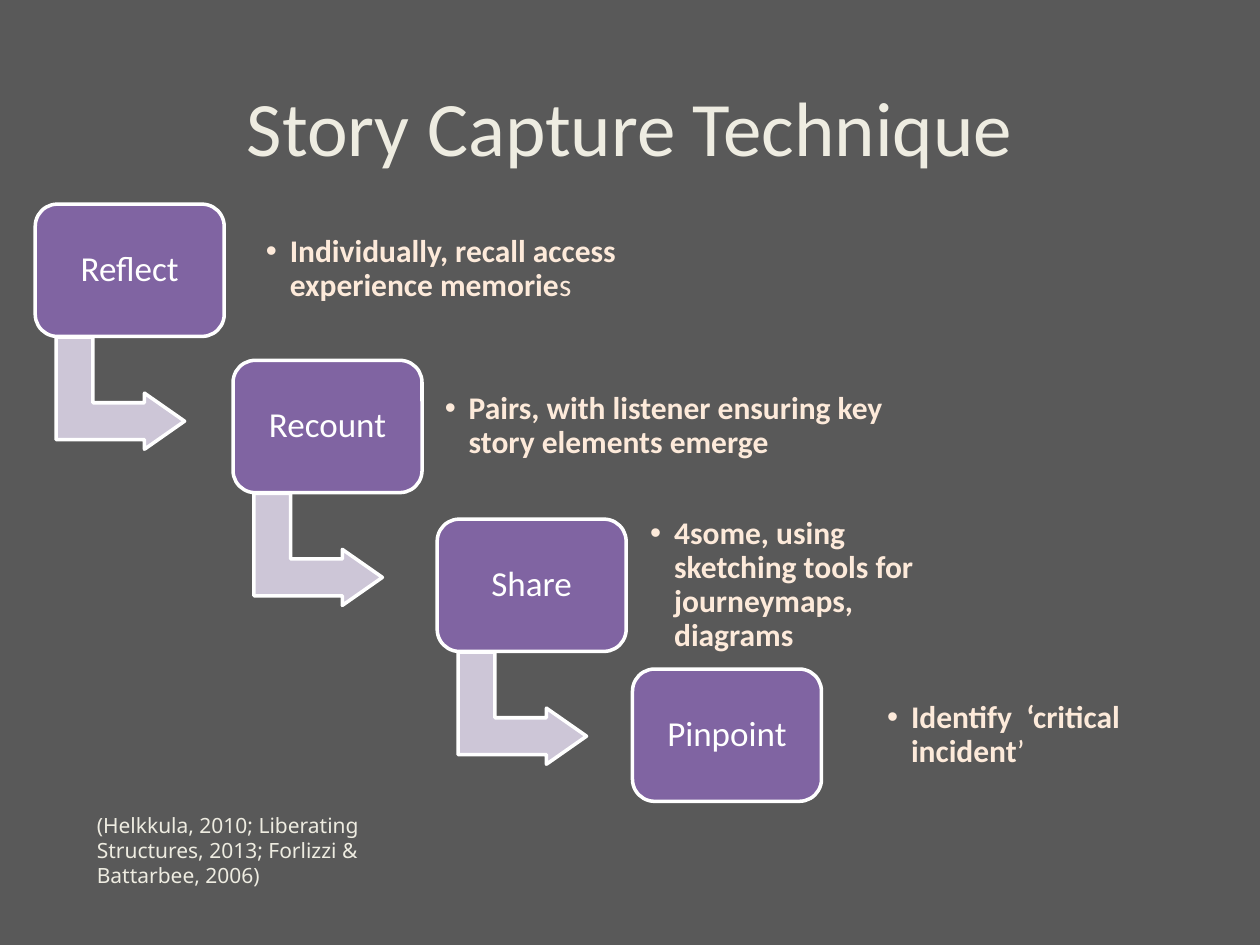
"""Build the Story Capture Technique slide: four cascading steps with their details."""
from typing import Any, NamedTuple

from lxml.etree import SubElement
from pptx import Presentation
from pptx.dml.color import RGBColor
from pptx.enum.shapes import MSO_SHAPE as Preset
from pptx.enum.text import MSO_ANCHOR as Anchor, MSO_AUTO_SIZE as AutoSize, PP_ALIGN as Align
from pptx.oxml.ns import qn
from pptx.util import Inches, Pt

BACKGROUND = RGBColor(0x59, 0x59, 0x59)
CREAM = RGBColor(0xEE, 0xEC, 0xE1)
PEACH = RGBColor(0xFD, 0xEA, 0xDA)
PURPLE = RGBColor(0x80, 0x64, 0xA2)
LILAC = RGBColor(0xCD, 0xC6, 0xD7)
WHITE = RGBColor(0xFF, 0xFF, 0xFF)

STEP_WIDTH, STEP_HEIGHT = 1.5, 1.05
ARROW_WIDTH, ARROW_HEIGHT = 0.89, 1.02
ARROW_SHIFT_X, ARROW_SHIFT_Y = 0.23, 0.99
ARROW_ADJUSTMENTS = (0.328, 0.25, 0.358)


class Box(NamedTuple):
    left: float
    top: float
    width: float
    height: float


class Step(NamedTuple):
    name: str
    left: float
    top: float
    bold_detail: str
    plain_ending: str
    detail_box: Box


STEPS = (
    Step("Reflect", 0.28, 1.62, "Individually, recall access experience memorie", "s",
         Box(2.04, 1.6, 4.06, 1.07)),
    Step("Recount", 1.85, 2.86, "Pairs, with listener ensuring key story elements emerge", "",
         Box(3.46, 2.7, 3.83, 1.37)),
    Step("Share", 3.47, 4.12, "4some, using sketching tools for journeymaps, diagrams", "",
         Box(5.09, 4.08, 2.44, 1.13)),
    Step("Pinpoint", 5.02, 5.31, "Identify  ‘critical incident", "’",
         Box(6.97, 5.41, 2.13, 0.85)),
)


def apply_format(target: Any, values: dict[str, Any]) -> None:
    for attribute, value in values.items():
        setattr(target, attribute, value)


def place(shape: Any, box: Box) -> None:
    apply_format(shape, {side: Inches(length) for side, length in box._asdict().items()})


def set_frame(shape: Any, margin: float) -> Any:
    frame = shape.text_frame
    sides = ("margin_left", "margin_top", "margin_right", "margin_bottom")
    apply_format(frame, dict.fromkeys(sides, Inches(margin)))
    apply_format(frame, {"word_wrap": True, "auto_size": AutoSize.NONE,
                         "vertical_anchor": Anchor.MIDDLE})
    return frame


def write(paragraph: Any, text: str, size: int, color: RGBColor,
          font: str = "Calibri", bold: bool = False) -> None:
    run = paragraph.add_run()
    run.text = text
    apply_format(run.font, {"name": font, "size": Pt(size), "bold": bold})
    run.font.color.rgb = color


def add_outlined(slide: Any, preset: Preset, box: Box, fill: RGBColor,
                 adjustments: tuple[float, ...]) -> Any:
    shape = slide.shapes.add_shape(preset, *map(Inches, box))
    shape.shadow.inherit = False
    shape.fill.solid()
    shape.fill.fore_color.rgb = fill
    shape.line.color.rgb = WHITE
    shape.line.width = Pt(2)
    for index, value in enumerate(adjustments):
        shape.adjustments[index] = value
    return shape


def add_arrow(slide: Any, step: Step) -> None:
    box = Box(step.left + ARROW_SHIFT_X, step.top + ARROW_SHIFT_Y, ARROW_WIDTH, ARROW_HEIGHT)
    arrow = add_outlined(slide, Preset.BENT_UP_ARROW, box, LILAC, ARROW_ADJUSTMENTS)
    arrow.rotation = 90


def add_step(slide: Any, step: Step) -> None:
    box = Box(step.left, step.top, STEP_WIDTH, STEP_HEIGHT)
    card = add_outlined(slide, Preset.ROUNDED_RECTANGLE, box, PURPLE, (0.167,))
    name = set_frame(card, 0.08).paragraphs[0]
    apply_format(name, {"alignment": Align.CENTER, "line_spacing": 0.9, "space_after": Pt(7)})
    write(name, step.name, 20, WHITE)


def fill_detail(body: Any, step: Step) -> None:
    place(body, step.detail_box)
    detail = set_frame(body, 0.07).paragraphs[0]
    apply_format(detail, {"level": 1, "alignment": Align.LEFT, "line_spacing": 0.9,
                          "space_before": Pt(0), "space_after": Pt(2.7)})
    properties = detail._p.get_or_add_pPr()
    properties.set("marL", str(Inches(0.19)))
    properties.set("indent", str(Inches(-0.19)))
    SubElement(properties, qn("a:buChar")).set("char", "•")
    write(detail, step.bold_detail, 18, PEACH, bold=True)
    if step.plain_ending:
        write(detail, step.plain_ending, 18, PEACH)


def add_citation(slide: Any) -> None:
    citation = slide.shapes.add_textbox(*map(Inches, Box(0.67, 6.4, 2.99, 0.71)))
    apply_format(citation.text_frame, {"word_wrap": True, "auto_size": AutoSize.SHAPE_TO_FIT_TEXT})
    write(citation.text_frame.paragraphs[0],
          "(Helkkula, 2010; Liberating Structures, 2013; Forlizzi & Battarbee, 2006)",
          12, CREAM, "Noto Sans")


def main() -> None:
    deck = Presentation()
    deck.slide_width, deck.slide_height = Inches(10), Inches(7.5)
    comparison = deck.slide_layouts.get_by_name("Comparison")
    slide = deck.slides.add_slide(comparison)
    slide.background.fill.solid()
    slide.background.fill.fore_color.rgb = BACKGROUND

    title = slide.shapes.title
    place(title, Box(0.5, 0.37, 9, 1.25))
    title.text_frame.vertical_anchor = Anchor.MIDDLE
    heading = title.text_frame.paragraphs[0]
    heading.alignment = Align.CENTER
    write(heading, "Story Capture Technique", 44, CREAM)

    for position, step in enumerate(STEPS, start=1):
        if step is not STEPS[-1]:
            add_arrow(slide, step)
        add_step(slide, step)
        fill_detail(slide.placeholders[position], step)
    add_citation(slide)
    deck.save("out.pptx")


if __name__ == "__main__":
    main()
